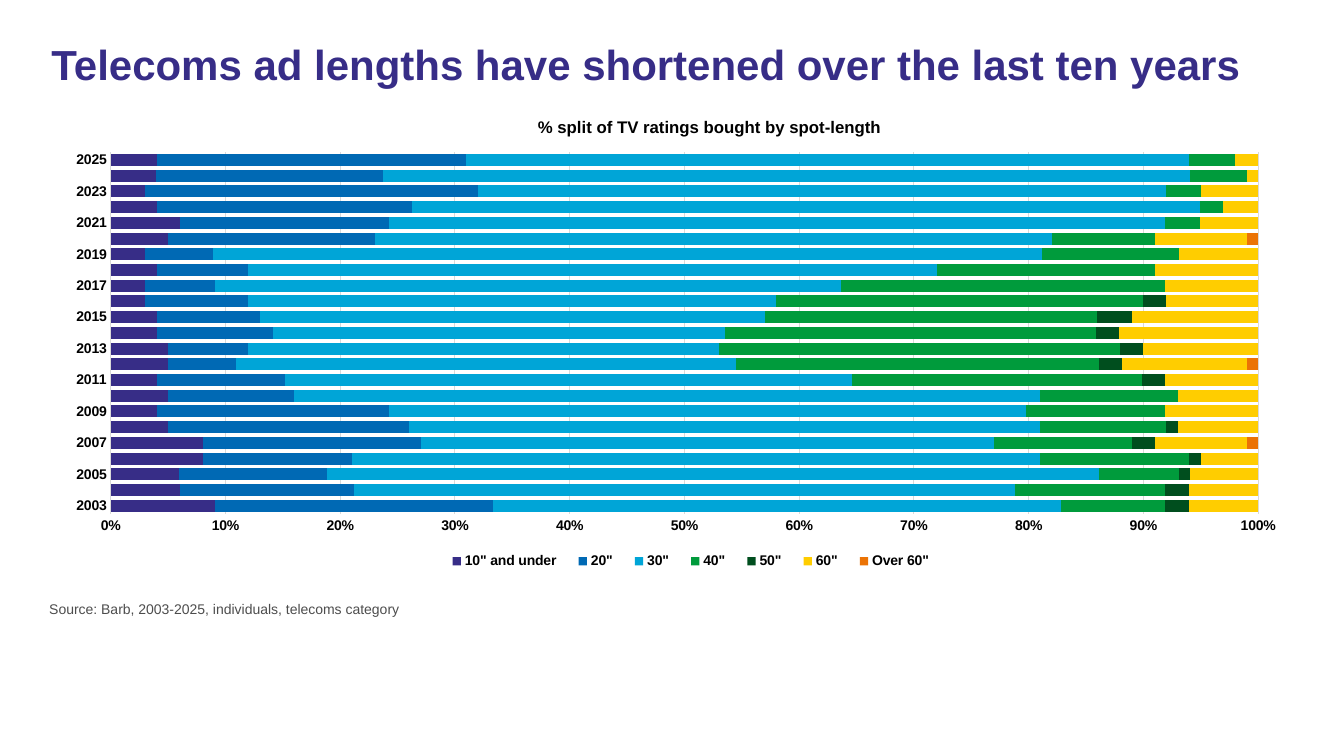
from lxml import etree
from pptx import Presentation
from pptx.chart.data import CategoryChartData
from pptx.dml.color import RGBColor
from pptx.enum.chart import XL_CHART_TYPE, XL_LEGEND_POSITION, XL_TICK_MARK
from pptx.enum.text import MSO_ANCHOR, PP_ALIGN
from pptx.oxml.ns import qn
from pptx.util import Inches, Pt

BAR_STACKED_100 = XL_CHART_TYPE.BAR_STACKED_100
BOTTOM = XL_LEGEND_POSITION.BOTTOM
NO_TICK = XL_TICK_MARK.NONE
TOP = MSO_ANCHOR.TOP
LEFT = PP_ALIGN.LEFT
PURPLE = RGBColor(0x37, 0x2D, 0x87)
BLUE = RGBColor(0x00, 0x69, 0xB4)
SKY = RGBColor(0x00, 0xA5, 0xD7)
GREEN = RGBColor(0x00, 0x9B, 0x3C)
DARK_GREEN = RGBColor(0x00, 0x4E, 0x1E)
YELLOW = RGBColor(0xFF, 0xCD, 0x00)
ORANGE = RGBColor(0xEB, 0x73, 0x05)
BLACK = RGBColor(0x00, 0x00, 0x00)
GREY = RGBColor(0x4D, 0x4D, 0x4D)
LIGHT_GREY = RGBColor(0xD9, 0xD9, 0xD9)

SPOT_LENGTHS = [
    ('10" and under', PURPLE,
     [9, 6, 6, 8, 8, 5, 4, 5, 4, 5, 5, 4, 4, 3, 3, 4, 3, 5, 6, 4, 3, 4, 4]),
    ('20"', BLUE,
     [24, 15, 13, 13, 19, 21, 20, 11, 11, 6, 7, 10, 9, 9, 6, 8, 6, 18, 18, 22, 29, 20, 27]),
    ('30"', SKY,
     [49, 57, 68, 60, 50, 55, 55, 65, 49, 44, 41, 39, 44, 46, 54, 60, 73, 59, 67, 68, 60, 71, 63]),
    ('40"', GREEN,
     [9, 13, 7, 13, 12, 11, 12, 12, 25, 32, 35, 32, 29, 32, 28, 19, 12, 9, 3, 2, 3, 5, 4]),
    ('50"', DARK_GREEN,
     [2, 2, 1, 1, 2, 1, 0, 0, 2, 2, 2, 2, 3, 2, 0, 0, 0, 0, 0, 0, None, None, None]),
    ('60"', YELLOW,
     [6, 6, 6, 5, 8, 7, 8, 7, 8, 11, 10, 12, 11, 8, 8, 9, 7, 8, 5, 3, 5, 1, 2]),
    ('Over 60"', ORANGE,
     [0, 0, 0, 0, 1, 0, 0, 0, 0, 1, 0, 0, 0, 0, 0, 0, 0, 1, 0, 0, 0, None, 0]),
]


def set_font(font, size, color, bold):
    font.name = "Arial"
    font.size = Pt(size)
    font.bold = bold
    font.color.rgb = color


def set_layout(parent, index, **settings):
    for old in parent.findall(qn("c:layout")):
        parent.remove(old)
    layout = etree.Element(qn("c:layout"))
    manual = etree.SubElement(layout, qn("c:manualLayout"))
    for tag, value in settings.items():
        etree.SubElement(manual, qn("c:" + tag)).set("val", str(value))
    parent.insert(index, layout)


prs = Presentation()
prs.slide_width = Inches(13.33)
prs.slide_height = Inches(7.5)
s = prs.slides.add_slide(prs.slide_layouts[5])

chart_data = CategoryChartData(number_format="0")
chart_data.categories = [str(year) for year in range(2003, 2026)]
for name, color, values in SPOT_LENGTHS:
    chart_data.add_series(name, values)
chart = s.shapes.add_chart(BAR_STACKED_100, Inches(0.48), Inches(0.99),
                           Inches(12.37), Inches(4.72), chart_data).chart
set_font(chart.font, 10, BLACK, True)

plot = chart.plots[0]
plot.gap_width = 30
plot.overlap = 100
plot.vary_by_categories = False
for series, (name, color, values) in zip(plot.series, SPOT_LENGTHS):
    series.format.fill.solid()
    series.format.fill.fore_color.rgb = color

year_axis = chart.category_axis
share_axis = chart.value_axis
for axis in (year_axis, share_axis):
    axis.major_tick_mark = NO_TICK
    axis.minor_tick_mark = NO_TICK
    set_font(axis.tick_labels.font, 10, BLACK, True)
skip = etree.Element(qn("c:tickLblSkip"))
skip.set("val", "2")
year_axis._element.find(qn("c:noMultiLvlLbl")).addprevious(skip)

share_axis.minimum_scale = 0
share_axis.maximum_scale = 1
share_axis.major_unit = 0.1
share_axis.tick_labels.number_format = "0%"
share_axis.tick_labels.number_format_is_linked = False
share_axis.format.line.fill.background()
share_axis.has_major_gridlines = True
for line in (year_axis.format.line, share_axis.major_gridlines.format.line):
    line.color.rgb = LIGHT_GREY
    line.width = Pt(0.75)

chart.has_title = True
r = chart.chart_title.text_frame.paragraphs[0].add_run()
r.text = "% split of TV ratings bought by spot-length"
set_font(r.font, 12, BLACK, True)
chart.has_legend = True
chart.legend.position = BOTTOM
chart.legend.include_in_layout = False
set_font(chart.legend.font, 10, BLACK, True)

set_layout(plot._element.getparent(), 0, layoutTarget="inner", xMode="edge",
           yMode="edge", x=0.05, y=0.11, w=0.92, h=0.76)
set_layout(chart.chart_title._element, 1, xMode="edge", yMode="edge", x=0.39, y=0.03)
set_layout(chart.legend._element, 1, xMode="edge", yMode="edge",
           x=0.31, y=0.94, w=0.41, h=0.06)

title = s.shapes.title
title.left, title.top = Inches(0.41), Inches(0.39)
title.width, title.height = Inches(12.4), Inches(1.12)
source = s.shapes.add_textbox(Inches(0.39), Inches(5.91), Inches(12.4), Inches(0.33))
for sp, text, size, color, bold in (
    (title, "Telecoms ad lengths have shortened over the last ten years", 30, PURPLE, True),
    (source, "Source: Barb, 2003-2025, individuals, telecoms category", 10, GREY, False),
):
    tf = sp.text_frame
    tf.word_wrap = True
    tf.vertical_anchor = TOP
    p = tf.paragraphs[0]
    p.alignment = LEFT
    r = p.add_run()
    r.text = text
    set_font(r.font, size, color, bold)
title.text_frame.paragraphs[0].line_spacing = 0.9

prs.save("out.pptx")
